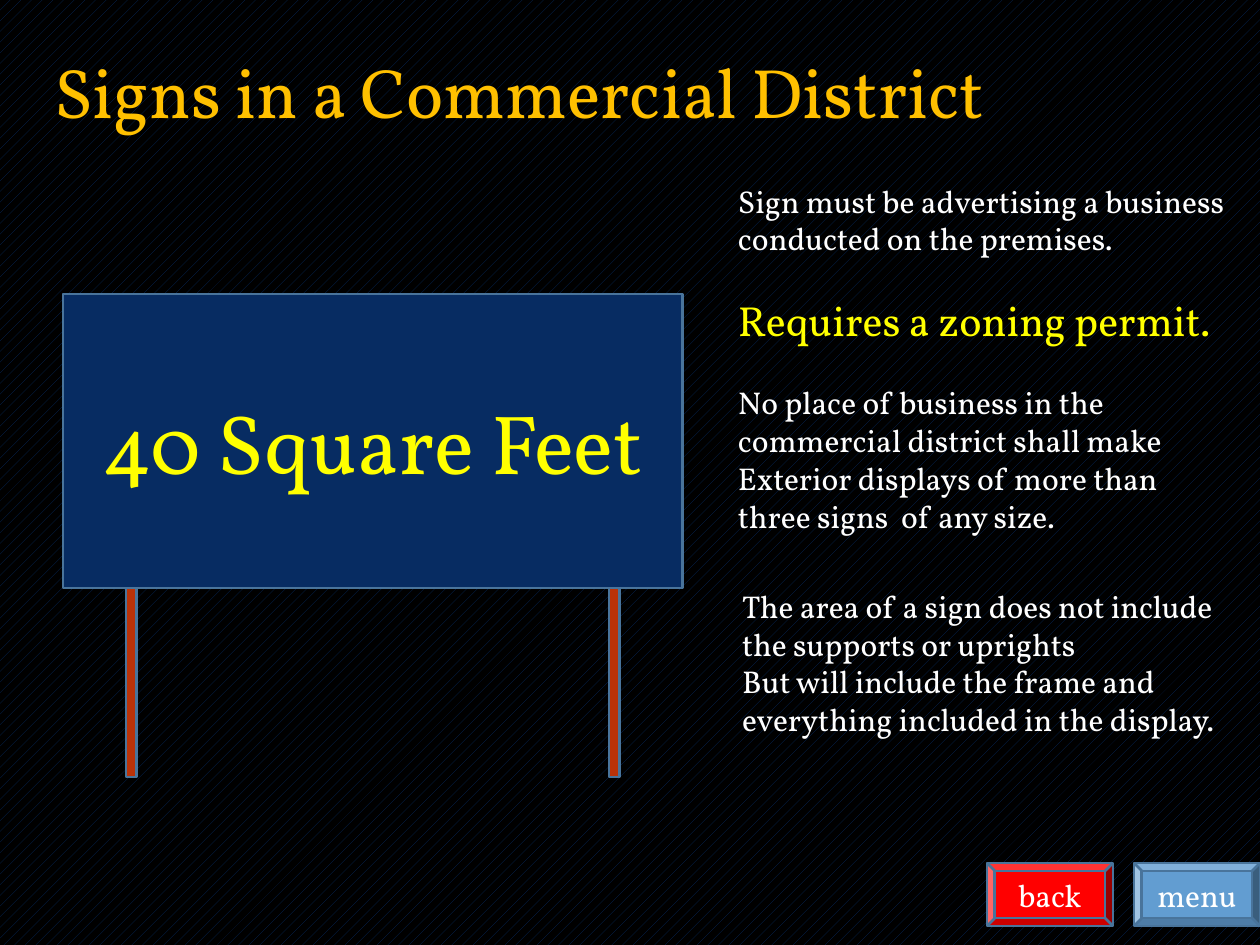
from pptx import Presentation
from pptx.dml.color import RGBColor
from pptx.enum.dml import MSO_PATTERN as Pattern
from pptx.enum.shapes import MSO_SHAPE as Shape
from pptx.enum.text import MSO_ANCHOR as Anchor, MSO_AUTO_SIZE as Fit, PP_ALIGN as Align
from pptx.util import Inches, Pt

COLS, ROWS = 120, 90  # twelve cells to the inch
WHITE, YELLOW, GOLD = "FFFFFF", "FFFF00", "FFC000"
NAVY, RUST, RED, BLUE, EDGE = "072C62", "BA3208", "FF0000", "629DD1", "49749B"


def color(code):
    return RGBColor.from_string(code)


class Deck:
    font = "Vollkorn"

    def __init__(self):
        self.prs = Presentation()
        self.prs.slide_width, self.prs.slide_height = Inches(10), Inches(7.5)
        self.slide = self.prs.slides.add_slide(self.prs.slide_layouts[6])

    def area(self, col, row, wide, high):
        """Turn grid cells into slide lengths."""
        x, y = self.prs.slide_width / COLS, self.prs.slide_height / ROWS
        return [round(n) for n in (col * x, row * y, wide * x, high * y)]

    def back(self, front, base):
        fill = self.slide.background.fill
        fill.patterned()
        fill.pattern = Pattern.PERCENT_20
        fill.fore_color.rgb, fill.back_color.rgb = color(front), color(base)

    def style(self, para, size, tint):
        for run in para.runs:
            run.font.name, run.font.size = self.font, Pt(size)
            run.font.color.rgb = color(tint)

    def block(self, kind, cells, fill, text="", size=18, tint=WHITE):
        shape = self.slide.shapes.add_shape(kind, *self.area(*cells))
        shape.shadow.inherit = False
        shape.fill.solid()
        shape.fill.fore_color.rgb = color(fill)
        shape.line.color.rgb, shape.line.width = color(EDGE), Pt(1.5)
        if text:
            frame = shape.text_frame
            frame.text, frame.vertical_anchor = text, Anchor.MIDDLE
            para = frame.paragraphs[0]
            para.alignment = Align.CENTER
            self.style(para, size, tint)

    def text(self, cells, *lines):
        """Each line is its words, size, colour and space before."""
        frame = self.slide.shapes.add_textbox(*self.area(*cells)).text_frame
        frame.word_wrap, frame.auto_size = True, Fit.SHAPE_TO_FIT_TEXT
        for i, (words, size, tint, gap) in enumerate(lines):
            para = frame.add_paragraph() if i else frame.paragraphs[0]
            para.text = words
            if gap:
                para.space_before = Pt(gap)
            self.style(para, size, tint)


def main():
    deck = Deck()
    deck.back(NAVY, "000000")

    # Buttons
    for col, fill, name in ((108, BLUE, "menu"), (94, RED, "back")):
        deck.block(Shape.BEVEL, (col, 82.2, 12, 6), fill, name)

    # Title
    deck.text((4, 4, 110, 9.2), ("Signs in a Commercial District", 40, GOLD, 0))

    # Sign on two posts
    deck.block(Shape.RECTANGLE, (6, 28, 59, 28), NAVY, "40 Square Feet", 48, YELLOW)
    for col in (12, 58):
        deck.block(Shape.RECTANGLE, (col, 56, 1, 18), RUST)

    # Rules
    gap = 21.6
    deck.text(
        (69.1, 16.7, 49.8, 35.2),
        ("Sign must be advertising a business conducted on the premises.", 18, WHITE, 0),
        ("Requires a zoning permit.", 24, YELLOW, gap),
        ("No place of business in the", 18, WHITE, gap),
        ("commercial district shall make", 18, WHITE, 0),
        ("Exterior displays of more than", 18, WHITE, 0),
        ("three signs  of any size.", 18, WHITE, 0),
    )
    deck.text(
        (69.5, 55.3, 47.6, 19.4),
        ("The area of a sign does not include the supports or uprights", 18, WHITE, 0),
        ("But will include the frame and everything included in the display.", 18, WHITE, 0),
    )

    deck.prs.save("out.pptx")


if __name__ == "__main__":
    main()
